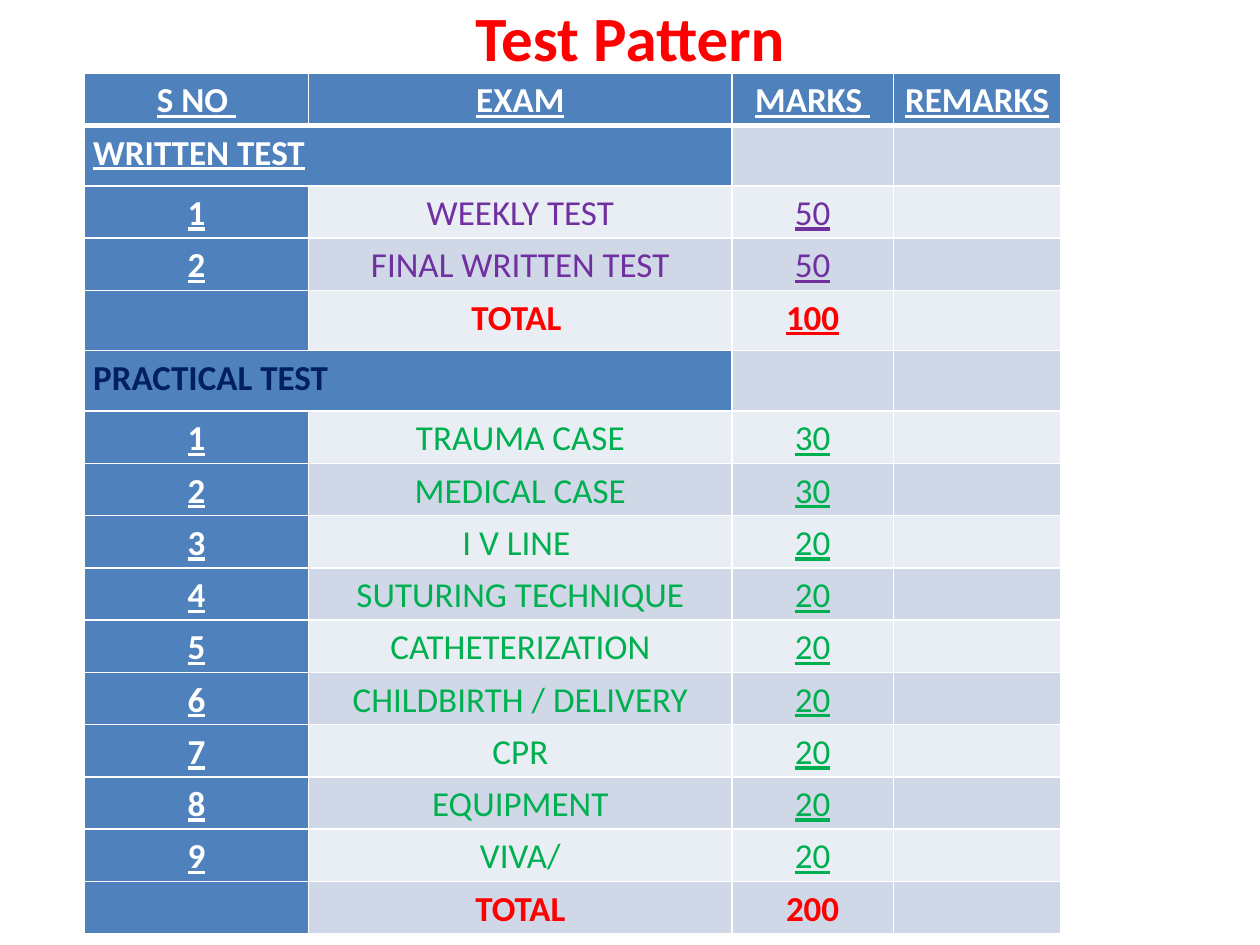
import pptx
import pptx.dml.color
import pptx.enum.text
import pptx.oxml
import pptx.oxml.ns
import pptx.util

Inches = pptx.util.Inches
Pt = pptx.util.Pt
RGBColor = pptx.dml.color.RGBColor
PP_ALIGN = pptx.enum.text.PP_ALIGN
MSO_ANCHOR = pptx.enum.text.MSO_ANCHOR

WHITE = RGBColor(0xFF, 0xFF, 0xFF)
RED = RGBColor(0xFF, 0x00, 0x00)
BLUE = RGBColor(0x4F, 0x81, 0xBD)
NAVY = RGBColor(0x00, 0x20, 0x60)
PURPLE = RGBColor(0x70, 0x30, 0xA0)
GREEN = RGBColor(0x00, 0xB0, 0x50)
DARK_BAND = RGBColor(0xD0, 0xD8, 0xE8)
LIGHT_BAND = RGBColor(0xE9, 0xED, 0xF4)

HEADERS = ["S NO ", "EXAM", "MARKS ", "REMARKS"]
WRITTEN = [("WEEKLY TEST", "50"), ("FINAL WRITTEN TEST", "50")]
PRACTICAL = [
    ("TRAUMA CASE", "30"),
    ("MEDICAL CASE", "30"),
    ("I V LINE ", "20"),
    ("SUTURING TECHNIQUE", "20"),
    ("CATHETERIZATION", "20"),
    ("CHILDBIRTH / DELIVERY", "20"),
    ("CPR", "20"),
    ("EQUIPMENT", "20"),
    ("VIVA/", "20"),
]
COL_WIDTHS = [1.78, 3.36, 1.28, 1.33]
TALL_ROWS = {1, 4, 5}
TALL_HEIGHT = 0.48
ROW_COUNT = 16


def write_text(tf, text, size=20, color=WHITE, bold=False, underline=False,
               align=PP_ALIGN.CENTER, spacing=1.15):
    p = tf.paragraphs[0]
    p.alignment = align
    p.line_spacing = spacing
    r = p.add_run()
    r.text = text
    r.font.name = "Calibri"
    r.font.size = Pt(size)
    r.font.color.rgb = color
    r.font.bold = bold
    r.font.underline = underline


def add_title(s, left, top, width, height):
    tf = s.shapes.add_textbox(Inches(left), Inches(top), Inches(width), Inches(height)).text_frame
    tf.word_wrap = True
    tf.vertical_anchor = MSO_ANCHOR.MIDDLE
    write_text(tf, "Test Pattern", size=36, color=RED, bold=True, spacing=1)


def set_borders(cell, bottom=1):
    tc_pr = cell._tc.get_or_add_tcPr()
    widths = {"lnL": 1, "lnR": 1, "lnT": 1, "lnB": bottom}
    for i, (tag, width) in enumerate(widths.items()):
        tc_pr.insert(i, pptx.oxml.parse_xml(
            f'<a:{tag} {pptx.oxml.ns.nsdecls("a")} w="{Pt(width)}">'
            f'<a:solidFill><a:srgbClr val="{WHITE}"/></a:solidFill></a:{tag}>'))


def style_cell(cell, row, col):
    cell.margin_left = cell.margin_right = Inches(0.07)
    cell.margin_top = cell.margin_bottom = 0
    cell.fill.solid()
    band = DARK_BAND if row % 2 else LIGHT_BAND
    cell.fill.fore_color.rgb = BLUE if row == 0 or col == 0 else band
    set_borders(cell, bottom=3 if row == 0 else 1)


def fill_section(table, row, heading, exams, color, total, heading_style, total_underline):
    table.cell(row, 0).merge(table.cell(row, 1))
    write_text(table.cell(row, 0).text_frame, heading, bold=True,
               align=PP_ALIGN.LEFT, **heading_style)
    for number, (exam, marks) in enumerate(exams, 1):
        cells = table.rows[row + number].cells
        write_text(cells[0].text_frame, str(number), bold=True, underline=True)
        write_text(cells[1].text_frame, exam, color=color)
        write_text(cells[2].text_frame, marks, color=color, underline=True)
    label, marks = total
    cells = table.rows[row + len(exams) + 1].cells
    write_text(cells[1].text_frame, label, color=RED, bold=True)
    write_text(cells[2].text_frame, marks, color=RED, bold=True, underline=total_underline)
    return row + len(exams) + 2


def add_marks_table(s, left, top, width, height):
    table = s.shapes.add_table(ROW_COUNT, len(COL_WIDTHS), Inches(left), Inches(top),
                               Inches(width), Inches(height)).table
    table.first_row = False
    table.horz_banding = False
    for column, col_width in zip(table.columns, COL_WIDTHS):
        column.width = Inches(col_width)
    row_height = (height - TALL_HEIGHT * len(TALL_ROWS)) / (ROW_COUNT - len(TALL_ROWS))
    for i, row in enumerate(table.rows):
        row.height = Inches(TALL_HEIGHT if i in TALL_ROWS else row_height)
        for j, cell in enumerate(row.cells):
            style_cell(cell, i, j)
    for j, header in enumerate(HEADERS):
        write_text(table.cell(0, j).text_frame, header, bold=True, underline=True)
    next_row = fill_section(table, 1, "WRITTEN TEST", WRITTEN, PURPLE, ("TOTAL ", "100"),
                            {"underline": True}, True)
    fill_section(table, next_row, "PRACTICAL TEST", PRACTICAL, GREEN, ("TOTAL", "200"),
                 {"color": NAVY}, False)


def main():
    prs = pptx.Presentation()
    prs.slide_width = Inches(10)
    prs.slide_height = Inches(7.5)
    s = prs.slides.add_slide(prs.slide_layouts[6])
    add_title(s, 0.5, 0, 9, 0.58)
    add_marks_table(s, 0.67, 0.58, sum(COL_WIDTHS), 6.83)
    prs.save("out.pptx")


if __name__ == "__main__":
    main()
